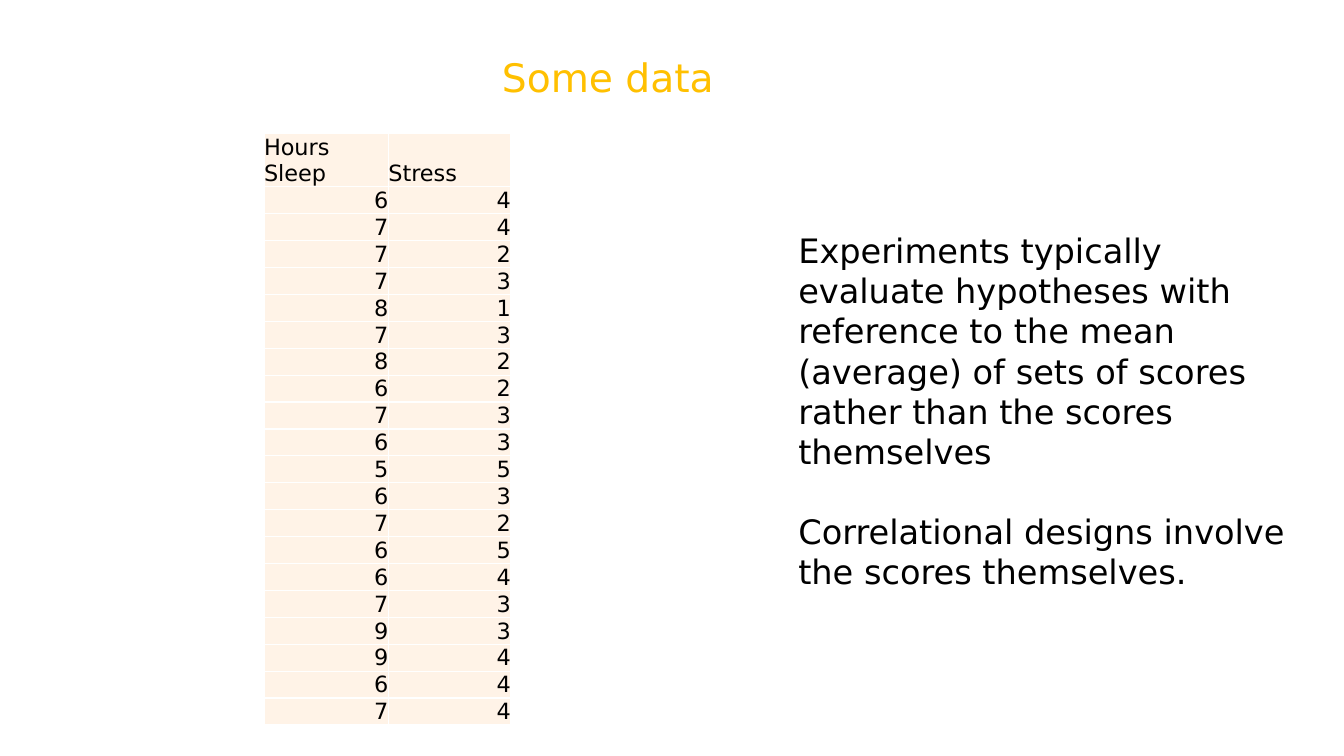
from lxml import etree
from pptx import Presentation
from pptx.dml.color import RGBColor
from pptx.enum.text import MSO_ANCHOR, MSO_AUTO_SIZE, PP_ALIGN
from pptx.oxml.ns import qn
from pptx.util import Inches, Pt

BLACK = RGBColor(0x00, 0x00, 0x00)
WHITE = RGBColor(0xFF, 0xFF, 0xFF)
GOLD = RGBColor(0xFF, 0xC0, 0x00)
CREAM = RGBColor(0xFF, 0xF3, 0xE7)
LEFT, RIGHT = PP_ALIGN.LEFT, PP_ALIGN.RIGHT
TOP, BOTTOM = MSO_ANCHOR.TOP, MSO_ANCHOR.BOTTOM
FIT = MSO_AUTO_SIZE.SHAPE_TO_FIT_TEXT

HEADS = ("Hours Sleep", "Stress")
SLEEP = (6, 7, 7, 7, 8, 7, 8, 6, 7, 6, 5, 6, 7, 6, 6, 7, 9, 9, 6, 7)
STRESS = (4, 4, 2, 3, 1, 3, 2, 2, 3, 3, 5, 3, 2, 5, 4, 3, 3, 4, 4, 4)
NOTES = (
    "Experiments typically evaluate hypotheses with reference to the mean "
    "(average) of sets of scores rather than the scores themselves",
    "Correlational designs involve the scores themselves.",
)


class Page:
    """One slide; lengths are percentages of its width and height."""

    face = "DejaVu Sans"

    def __init__(self, deck):
        self.deck = deck
        self.slide = deck.slides.add_slide(deck.slide_layouts[5])

    def wide(self, share):
        return round(self.deck.slide_width * share / 100)

    def high(self, share):
        return round(self.deck.slide_height * share / 100)

    def area(self, x, y, w, h):
        return self.wide(x), self.high(y), self.wide(w), self.high(h)

    def style(self, para, size, color=BLACK, align=LEFT):
        para.alignment = align
        para.font.name = self.face
        para.font.size = Pt(size)
        para.font.color.rgb = color

    def title(self, text, *area):
        box = self.slide.shapes.title
        box.left, box.top, box.width, box.height = self.area(*area)
        frame = box.text_frame
        frame.text = text
        frame.word_wrap = False
        frame.auto_size = FIT
        frame.vertical_anchor = TOP
        self.style(frame.paragraphs[0], 28, GOLD)

    def text(self, lines, gap, *area):
        frame = self.slide.shapes.add_textbox(*self.area(*area)).text_frame
        frame.word_wrap = True
        frame.auto_size = FIT
        for i, line in enumerate(lines):
            para = frame.add_paragraph() if i else frame.paragraphs[0]
            para.text = line
            para.space_before = Pt(gap if i else 0)
            self.style(para, 24)

    def border(self, cell):
        props = cell._tc.get_or_add_tcPr()
        for side in ("lnL", "lnR", "lnT", "lnB"):
            line = etree.SubElement(props, qn("a:" + side), w=str(Pt(1)))
            fill = etree.SubElement(line, qn("a:solidFill"))
            etree.SubElement(fill, qn("a:srgbClr"), val=str(WHITE))

    def cell(self, cell, text, align):
        cell.margin_left = cell.margin_right = 0
        cell.margin_top = cell.margin_bottom = 0
        cell.vertical_anchor = BOTTOM
        self.border(cell)
        cell.fill.solid()
        cell.fill.fore_color.rgb = CREAM
        cell.text = text
        self.style(cell.text_frame.paragraphs[0], 16, BLACK, align)

    def table(self, rows, cols, step, *area):
        box = self.slide.shapes.add_table(len(rows), len(cols), *self.area(*area))
        grid = box.table
        grid.first_row = grid.horz_banding = False
        for col, share in zip(grid.columns, cols):
            col.width = self.wide(share)
        for r, row in enumerate(rows):
            grid.rows[r].height = self.high(step)
            for c, value in enumerate(row):
                self.cell(grid.cell(r, c), str(value), RIGHT if r else LEFT)
        box.height = self.high(area[3])


def main():
    deck = Presentation()
    deck.slide_width, deck.slide_height = Inches(13.33), Inches(7.5)
    page = Page(deck)

    # Notes beside the data
    page.text(NOTES, 28, 58.66, 29.73, 38.48, 53.87)

    # Heading
    page.title("Some data", 36.6, 6.4, 17.55, 7.6)

    # Scores
    rows = [HEADS, *zip(SLEEP, STRESS)]
    page.table(rows, (9.25, 9.1), 2.8, 19.65, 17.6, 18.35, 78.27)

    deck.save("out.pptx")


if __name__ == "__main__":
    main()
